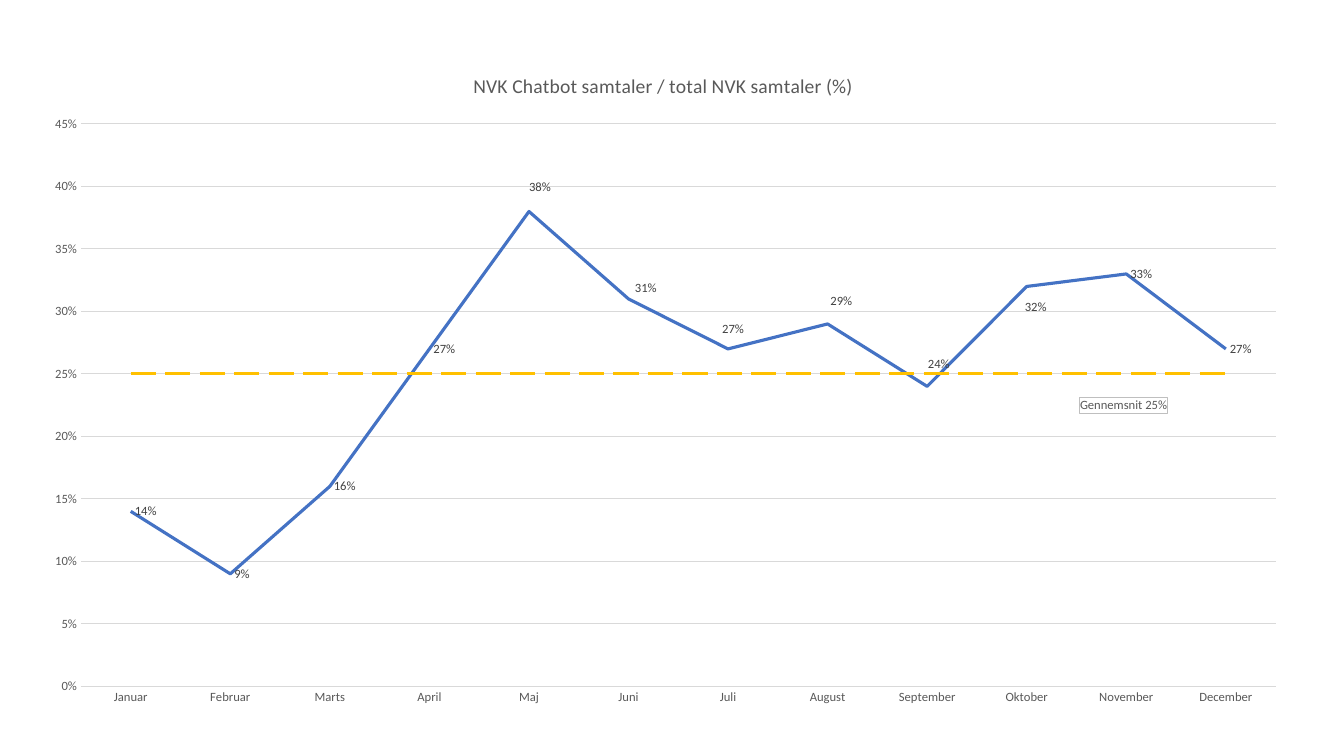
import pptx
import pptx.chart.data
import pptx.dml.color
import pptx.enum.chart
import pptx.enum.dml
import pptx.oxml
import pptx.oxml.ns
import pptx.util
from pptx.util import Cm

FONT = "Calibri"
GREY, DARK_GREY, LIGHT_GREY = "595959", "404040", "D9D9D9"
BLUE, YELLOW = "4472C4", "FFC000"
CHART_WIDTH, CHART_HEIGHT = Cm(32.03), Cm(16.87)

MONTHS = ["Januar", "Februar", "Marts", "April", "Maj", "Juni", "Juli",
          "August", "September", "Oktober", "November", "December"]
SHARES = [0.14, 0.09, 0.16, 0.27, 0.38, 0.31, 0.27, 0.29, 0.24, 0.32, 0.33, 0.27]
AVERAGE = 0.25
# Month: how far its label is moved right and down, in cm
LABEL_SHIFTS = {"Maj": (-0.1, -0.6), "Juni": (0.06, -0.28), "Juli": (-0.25, -0.5),
                "August": (-0.03, -0.58), "September": (-0.08, -0.55),
                "Oktober": (-0.15, 0.53)}


def color(hex_string):
    return pptx.dml.color.RGBColor.from_string(hex_string)


def format_font(font, size, hex_string):
    font.name = FONT
    font.size = pptx.util.Pt(size)
    font.bold = False
    font.color.rgb = color(hex_string)


def format_line(line, hex_string, width):
    line.color.rgb = color(hex_string)
    line.width = pptx.util.Pt(width)


def chart_xml(content):
    """Parse one chart element, given with the prefixes c and a."""
    tag, rest = content.split(">", 1)
    return pptx.oxml.parse_xml(f"{tag} {pptx.oxml.ns.nsdecls('c', 'a')}>{rest}")


def layout_xml(target="", **values):
    """Build a manual layout; values are fractions of the chart's size."""
    entries = "".join(f'<c:{name} val="{value:.4f}"/>' for name, value in values.items())
    return chart_xml(f"<c:layout><c:manualLayout>{target}{entries}"
                     "</c:manualLayout></c:layout>")


def edge_layout(target="", **values):
    modes = '<c:xMode val="edge"/><c:yMode val="edge"/>'
    return layout_xml(target + modes, **values)


def find(element, tag):
    return element.find(pptx.oxml.ns.qn(tag))


def replace_layout(parent, layout, index):
    old = find(parent, "c:layout")
    if old is not None:
        parent.remove(old)
    parent.insert(index, layout)


def point_label_element(series, index):
    labels = find(series._element, "c:dLbls")
    return next(label for label in labels.findall(pptx.oxml.ns.qn("c:dLbl"))
                if find(label, "c:idx").get("val") == str(index))


def shift_label(series, index, right, down):
    layout = layout_xml(x=Cm(right) / CHART_WIDTH, y=Cm(down) / CHART_HEIGHT)
    replace_layout(point_label_element(series, index), layout, 1)


def hide_leader_lines(series):
    leader_lines = find(find(series._element, "c:dLbls"), "c:showLeaderLines")
    if leader_lines is not None:
        leader_lines.set("val", "0")


def format_title(chart, text):
    chart.has_title = True
    paragraph = chart.chart_title.text_frame.paragraphs[0]
    run = paragraph.add_run()
    run.text = text
    format_font(run.font, 14, GREY)
    chart.chart_title.include_in_layout = False
    layout = edge_layout(x=Cm(11.08) / CHART_WIDTH, y=Cm(0.46) / CHART_HEIGHT)
    replace_layout(chart.chart_title._element, layout, 1)


def format_axes(chart):
    for axis in (chart.category_axis, chart.value_axis):
        axis.major_tick_mark = pptx.enum.chart.XL_TICK_MARK.NONE
        axis.minor_tick_mark = pptx.enum.chart.XL_TICK_MARK.NONE
        format_font(axis.tick_labels.font, 9, GREY)
    format_line(chart.category_axis.format.line, LIGHT_GREY, 0.75)
    value_axis = chart.value_axis
    value_axis.minimum_scale, value_axis.maximum_scale = 0, 0.45
    value_axis.major_unit = 0.05
    value_axis.tick_labels.number_format = "0%"
    value_axis.tick_labels.number_format_is_linked = False
    value_axis.format.line.fill.background()
    format_line(value_axis.major_gridlines.format.line, LIGHT_GREY, 0.75)


def format_series(series, hex_string):
    series.smooth = False
    series.marker.style = pptx.enum.chart.XL_MARKER_STYLE.NONE
    format_line(series.format.line, hex_string, 2.25)


def label_shares(series):
    labels = series.data_labels
    labels.show_value = True
    labels.number_format = "0%"
    labels.number_format_is_linked = False
    labels.position = pptx.enum.chart.XL_LABEL_POSITION.RIGHT
    format_font(labels.font, 9, DARK_GREY)
    for month, (right, down) in LABEL_SHIFTS.items():
        index = MONTHS.index(month)
        label = series.points[index].data_label
        format_font(label.font, 9, DARK_GREY)
        label.position = pptx.enum.chart.XL_LABEL_POSITION.RIGHT
        shift_label(series, index, right, down)
    hide_leader_lines(series)


def label_average(series, month, text):
    """Put one framed label below the line, at the given month."""
    index = MONTHS.index(month)
    label = series.points[index].data_label
    run = label.text_frame.paragraphs[0].add_run()
    run.text = text
    format_font(run.font, 9, GREY)
    label.position = pptx.enum.chart.XL_LABEL_POSITION.BELOW
    shift_label(series, index, -0.07, 0.49)
    frame = chart_xml('<c:spPr><a:solidFill><a:srgbClr val="FFFFFF"/></a:solidFill>'
                      '<a:ln w="9525"><a:solidFill><a:srgbClr val="BFBFBF"/>'
                      "</a:solidFill></a:ln></c:spPr>")
    find(point_label_element(series, index), "c:dLblPos").addprevious(frame)
    hide_leader_lines(series)


def add_line_chart(slide):
    data = pptx.chart.data.CategoryChartData(number_format="0%")
    data.categories = MONTHS
    data.add_series("Series 1", SHARES)
    data.add_series("Series 2", [AVERAGE] * len(MONTHS))
    chart = slide.shapes.add_chart(pptx.enum.chart.XL_CHART_TYPE.LINE, Cm(0.76), Cm(1.27),
                                   CHART_WIDTH, CHART_HEIGHT, data).chart
    chart.has_legend = False
    chart.font.name = FONT
    chart.font.size = pptx.util.Pt(10)
    chart.plots[0].vary_by_categories = False
    plot_area = find(find(chart._chartSpace, "c:chart"), "c:plotArea")
    replace_layout(plot_area, edge_layout('<c:layoutTarget val="inner"/>',
                                          x=0.04, y=0.11, w=0.94, h=0.84), 0)
    return chart


def main():
    presentation = pptx.Presentation()
    presentation.slide_width, presentation.slide_height = Cm(33.87), Cm(19.05)
    slide = presentation.slides.add_slide(presentation.slide_layouts.get_by_name("Blank"))
    chart = add_line_chart(slide)
    format_title(chart, "NVK Chatbot samtaler / total NVK samtaler (%)")
    format_axes(chart)
    shares, average = chart.plots[0].series
    format_series(shares, BLUE)
    label_shares(shares)
    format_series(average, YELLOW)
    average.format.line.dash_style = pptx.enum.dml.MSO_LINE.LONG_DASH
    label_average(average, "November", "Gennemsnit 25%")
    presentation.save("out.pptx")


if __name__ == "__main__":
    main()
